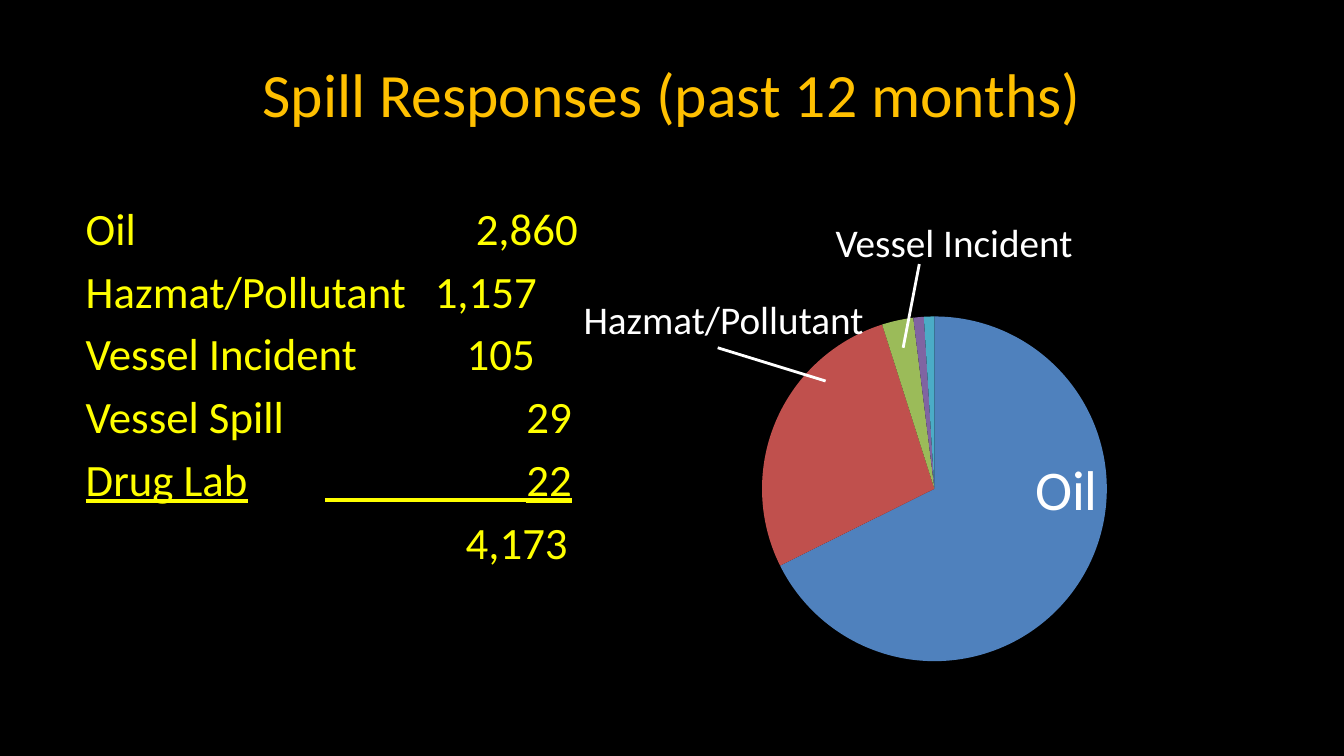
from dataclasses import dataclass
from lxml import etree
from pptx import Presentation
from pptx.chart.data import CategoryChartData
from pptx.dml.color import RGBColor
from pptx.enum.chart import XL_CHART_TYPE
from pptx.enum.shapes import MSO_CONNECTOR
from pptx.enum.text import MSO_ANCHOR, MSO_AUTO_SIZE, PP_ALIGN
from pptx.oxml import parse_xml
from pptx.oxml.ns import nsdecls, qn
from pptx.util import Inches, Pt

PIE = XL_CHART_TYPE.PIE
STRAIGHT = MSO_CONNECTOR.STRAIGHT
MIDDLE, TOP = MSO_ANCHOR.MIDDLE, MSO_ANCHOR.TOP
FIXED = MSO_AUTO_SIZE.NONE
LEFT, CENTER, RIGHT = PP_ALIGN.LEFT, PP_ALIGN.CENTER, PP_ALIGN.RIGHT


@dataclass
class Theme:
    font: str = "Calibri"
    background: str = "000000"
    heading: str = "FFC000"
    listing: str = "FFFF00"
    label: str = "FFFFFF"
    slices: tuple = ("4F81BD", "C0504D", "9BBB59", "8064A2", "4BACC6")
    title_size: int = 44
    list_size: int = 32
    label_size: int = 28
    oil_size: int = 40
    chart_size: int = 10


theme = Theme()
deck = Presentation()
deck.slide_width, deck.slide_height = Inches(13.33), Inches(7.5)


def area(left, top, width, height):
    column, row = deck.slide_width / 100, deck.slide_height / 100
    return round(left * column), round(top * row), round(width * column), round(height * row)


def write(para, text, size, color, align=LEFT, underline=None):
    para.alignment = align
    span = para.add_run()
    span.text = text
    span.font.name = theme.font
    span.font.size = Pt(size)
    span.font.underline = underline
    span.font.color.rgb = RGBColor.from_string(color)


page = deck.slides.add_slide(deck.slide_layouts[1])
page.background.fill.solid()
page.background.fill.fore_color.rgb = RGBColor.from_string(theme.background)

title, body = page.placeholders
title.left, title.top, title.width, title.height = area(5, 4, 90, 16.67)
title.text_frame.vertical_anchor = MIDDLE
write(title.text_frame.paragraphs[0], "Spill Responses (past 12 months)",
      theme.title_size, theme.heading, align=CENTER)

responses = [("Oil", 2860, 43), ("Hazmat/Pollutant", 1157, 39.95),
             ("Vessel Incident", 105, 39.8), ("Vessel Spill", 29, 42.55),
             ("Drug Lab", 22, 42.55)]
total = sum(count for name, count, right_edge in responses)

list_top, list_step, count_width = 25.87, 8.3, 12
body.left, body.top, body.width, body.height = area(5.63, list_top, 48.15, 65.6)
body.text_frame.auto_size = FIXED
body.text_frame.vertical_anchor = TOP
for index, (name, count, right_edge) in enumerate(responses):
    para = body.text_frame.paragraphs[0] if index == 0 else body.text_frame.add_paragraph()
    para.space_before = Pt(6.4 if index else 0)
    properties = para._p.get_or_add_pPr()
    properties.set("marL", "0")
    properties.set("indent", "0")
    etree.SubElement(properties, qn("a:buNone"))
    write(para, name, theme.list_size, theme.listing, underline=name == "Drug Lab")

for index, (name, count, right_edge) in enumerate(responses + [("Total", total, 42.25)]):
    box = page.shapes.add_textbox(*area(right_edge - count_width, list_top + index * list_step,
                                        count_width, list_step))
    box.text_frame.word_wrap = True
    box.text_frame.margin_right = 0
    write(box.text_frame.paragraphs[0], f"{count:,}", theme.list_size, theme.listing,
          align=RIGHT, underline=name == "Drug Lab")

chart_data = CategoryChartData()
chart_data.categories = [str(number + 1) for number in range(len(responses))]
chart_data.add_series("Series 1", [round(100 * count / total)
                                   for name, count, right_edge in responses])
chart = page.shapes.add_chart(PIE, *area(49.13, 39.33, 40.8, 50.67), chart_data).chart
chart.has_legend = False
chart.has_title = False
chart.font.name = theme.font
chart.font.size = Pt(theme.chart_size)
chart.font.color.rgb = RGBColor.from_string(theme.background)
plot = chart.plots[0]
plot.vary_by_categories = True
for index, color in enumerate(theme.slices):
    point = plot.series[0].points[index]
    point.format.fill.solid()
    point.format.fill.fore_color.rgb = RGBColor.from_string(color)
    point.format.line.fill.background()

plot_area = chart._chartSpace.chart.plotArea
for layout in plot_area.findall(qn("c:layout")):
    plot_area.remove(layout)
plot_area.insert(0, parse_xml(
    f'<c:layout {nsdecls("c")}><c:manualLayout><c:layoutTarget val="inner"/>'
    '<c:xMode val="edge"/><c:yMode val="edge"/><c:x val="0.03"/><c:y val="0.05"/>'
    '<c:w val="0.94"/><c:h val="0.9"/></c:manualLayout></c:layout>'))

for text, size, place in [
    ("Vessel Incident", theme.label_size, (61.43, 28.27, 19.35, 7.6)),
    ("Hazmat/Pollutant", theme.label_size, (42.68, 38.4, 22.58, 7.6)),
    ("Oil", theme.oil_size, (76.28, 59.47, 6.23, 10.27)),
]:
    box = page.shapes.add_textbox(*area(*place))
    box.text_frame.word_wrap = False
    write(box.text_frame.paragraphs[0], text, size, theme.label)

for start, end, color, weight in [
    ((61.43, 50.4), (53.4, 46), theme.label, 2),
    ((68.4, 34.93), (67.2, 46), theme.label, 2),
    ((24.18, 66.14), (42.55, 66.14), theme.listing, 2.5),
]:
    line = page.shapes.add_connector(STRAIGHT, *area(*start, *end))
    line.line.color.rgb = RGBColor.from_string(color)
    line.line.width = Pt(weight)
    etree.SubElement(line._element.spPr, qn("a:effectLst"))

deck.save("out.pptx")
